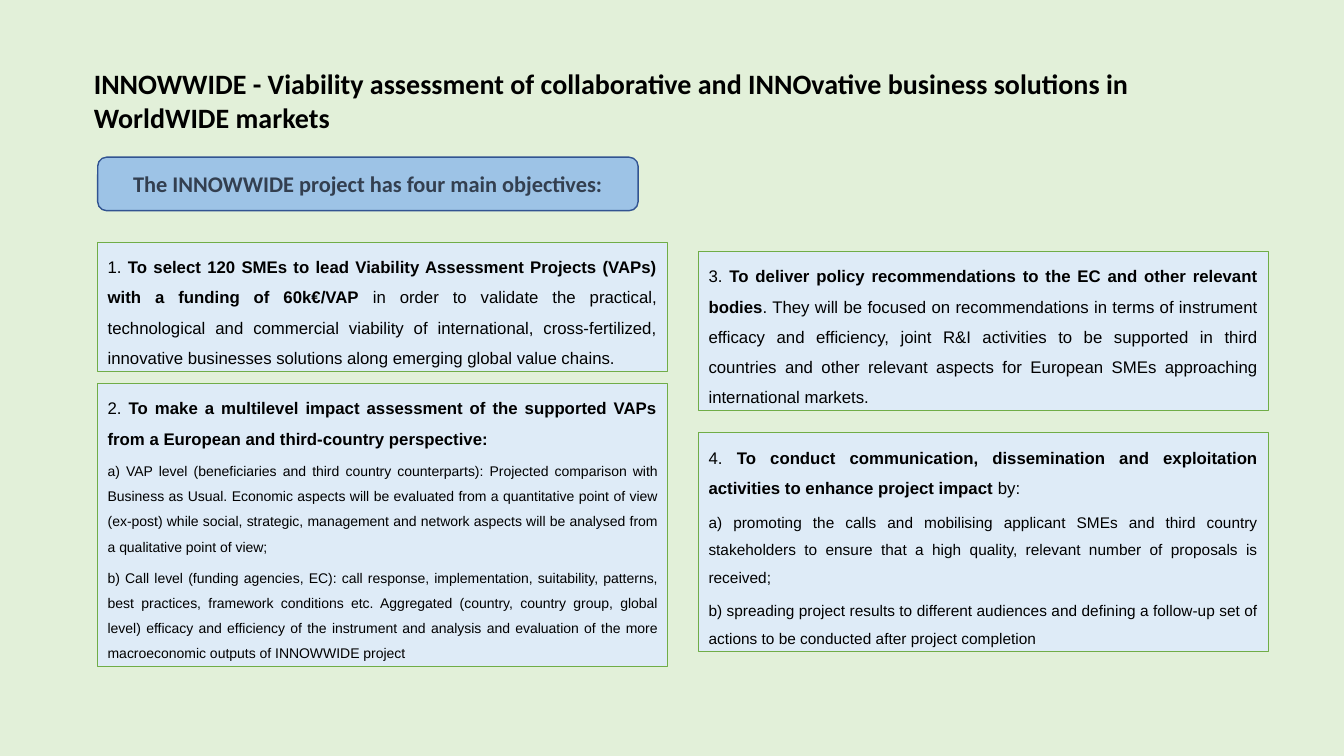
import pptx
import pptx.dml.color
import pptx.enum.shapes
import pptx.enum.text
import pptx.util

Pt = pptx.util.Pt
RGBColor = pptx.dml.color.RGBColor
Align = pptx.enum.text.PP_ALIGN
Anchor = pptx.enum.text.MSO_ANCHOR
Shape = pptx.enum.shapes.MSO_SHAPE

PALE_GREEN = RGBColor(0xE2, 0xF0, 0xD9)
PALE_BLUE = RGBColor(0xDE, 0xEB, 0xF7)
MID_BLUE = RGBColor(0x9D, 0xC3, 0xE6)
DARK_BLUE = RGBColor(0x32, 0x54, 0x91)
GREEN = RGBColor(0x70, 0xAD, 0x47)
SLATE = RGBColor(0x33, 0x3F, 0x50)
BLACK = RGBColor(0, 0, 0)

LEFT, RIGHT = 69.8, 499
OBJECTIVE_WIDTH = 406.8

# Each objective: left, top, height, (number, bold text, plain text), detail size, details
OBJECTIVES = [
    (LEFT, 172.8, 92.2,
     ("1. ",
      "To select 120 SMEs to lead Viability Assessment Projects (VAPs) with a funding of 60k€/VAP ",
      "in order to validate the practical, technological and commercial viability of "
      "international, cross-fertilized, innovative businesses solutions along emerging "
      "global value chains."),
     None, []),
    (LEFT, 273.6, 202.3,
     ("2. ",
      "To make a multilevel impact assessment of the supported VAPs from a European and "
      "third-country perspective:",
      ""),
     10,
     ["a) VAP level (beneficiaries and third country counterparts): Projected comparison with "
      "Business as Usual. Economic aspects will be evaluated from a quantitative point of view "
      "(ex-post) while social, strategic, management and network aspects will be analysed from "
      "a qualitative point of view;",
      "b) Call level (funding agencies, EC): call response, implementation, suitability, "
      "patterns, best practices, framework conditions etc. Aggregated (country, country group, "
      "global level) efficacy and efficiency of the instrument and analysis and evaluation of "
      "the more macroeconomic outputs of INNOWWIDE project"]),
    (RIGHT, 179.3, 113.8,
     ("3. ",
      "To deliver policy recommendations to the EC and other relevant bodies",
      ". They will be focused on recommendations in terms of instrument efficacy and "
      "efficiency, joint R&I activities to be supported in third countries and other relevant "
      "aspects for European SMEs approaching international markets. "),
     None, []),
    (RIGHT, 308.9, 156.2,
     ("4. ",
      "To conduct communication, dissemination and exploitation activities to enhance "
      "project impact",
      " by:"),
     11,
     ["a) promoting the calls and mobilising applicant SMEs and third country stakeholders to "
      "ensure that a high quality, relevant number of proposals is received;",
      "b) spreading project results to different audiences and defining a follow-up set of "
      "actions to be conducted after project completion"]),
]


def add_run(paragraph, text, font, size, color, bold=False):
    run = paragraph.add_run()
    run.text = text
    run.font.name = font
    run.font.size = Pt(size)
    run.font.color.rgb = color
    run.font.bold = bold


def add_panel(slide, preset, left, top, width, height, fill, line, weight, anchor):
    panel = slide.shapes.add_shape(preset, Pt(left), Pt(top), Pt(width), Pt(height))
    panel.shadow.inherit = False
    panel.fill.solid()
    panel.fill.fore_color.rgb = fill
    panel.line.color.rgb = line
    panel.line.width = Pt(weight)
    panel.text_frame.word_wrap = True
    panel.text_frame.vertical_anchor = anchor
    return panel.text_frame


def justify(paragraph):
    paragraph.alignment = Align.JUSTIFY
    paragraph.line_spacing = 1.5
    paragraph.space_after = Pt(4)


def add_title(slide, text):
    title = slide.shapes.title
    title.left, title.top, title.width, title.height = Pt(67), Pt(44), Pt(746.6), Pt(55.4)
    frame = title.text_frame
    frame.auto_size = pptx.enum.text.MSO_AUTO_SIZE.NONE
    frame.word_wrap = True
    frame.vertical_anchor = Anchor.TOP
    frame.margin_left = 0
    heading = frame.paragraphs[0]
    heading.alignment = Align.LEFT
    add_run(heading, text, "Calibri", 20, BLACK, True)


def add_banner(slide, text):
    frame = add_panel(slide, Shape.ROUNDED_RECTANGLE, LEFT, 112.3, 386, 38.2,
                      MID_BLUE, DARK_BLUE, 1, Anchor.MIDDLE)
    frame.paragraphs[0].alignment = Align.CENTER
    add_run(frame.paragraphs[0], text, "Calibri", 16, SLATE, True)


def add_objective(slide, left, top, height, lead, detail_size, details):
    frame = add_panel(slide, Shape.RECTANGLE, left, top, OBJECTIVE_WIDTH, height,
                      PALE_BLUE, GREEN, 0.5, Anchor.TOP)
    number, goal, explanation = lead
    opening = frame.paragraphs[0]
    justify(opening)
    add_run(opening, number, "Arial", 12, BLACK)
    add_run(opening, goal, "Arial", 12, BLACK, True)
    if explanation:
        add_run(opening, explanation, "Arial", 12, BLACK)
    for detail in details:
        paragraph = frame.add_paragraph()
        justify(paragraph)
        add_run(paragraph, detail, "Arial", detail_size, BLACK)


def main():
    deck = pptx.Presentation()
    deck.slide_width, deck.slide_height = Pt(960), Pt(540)
    slide = deck.slides.add_slide(deck.slide_layouts.get_by_name("Title Only"))
    slide.background.fill.solid()
    slide.background.fill.fore_color.rgb = PALE_GREEN

    # Heading
    add_title(slide, "INNOWWIDE - Viability assessment of collaborative and INNOvative "
                     "business solutions in WorldWIDE markets")
    add_banner(slide, "The INNOWWIDE project has four main objectives:")

    # Four objectives
    for objective in OBJECTIVES:
        add_objective(slide, *objective)

    deck.save("out.pptx")


if __name__ == "__main__":
    main()
